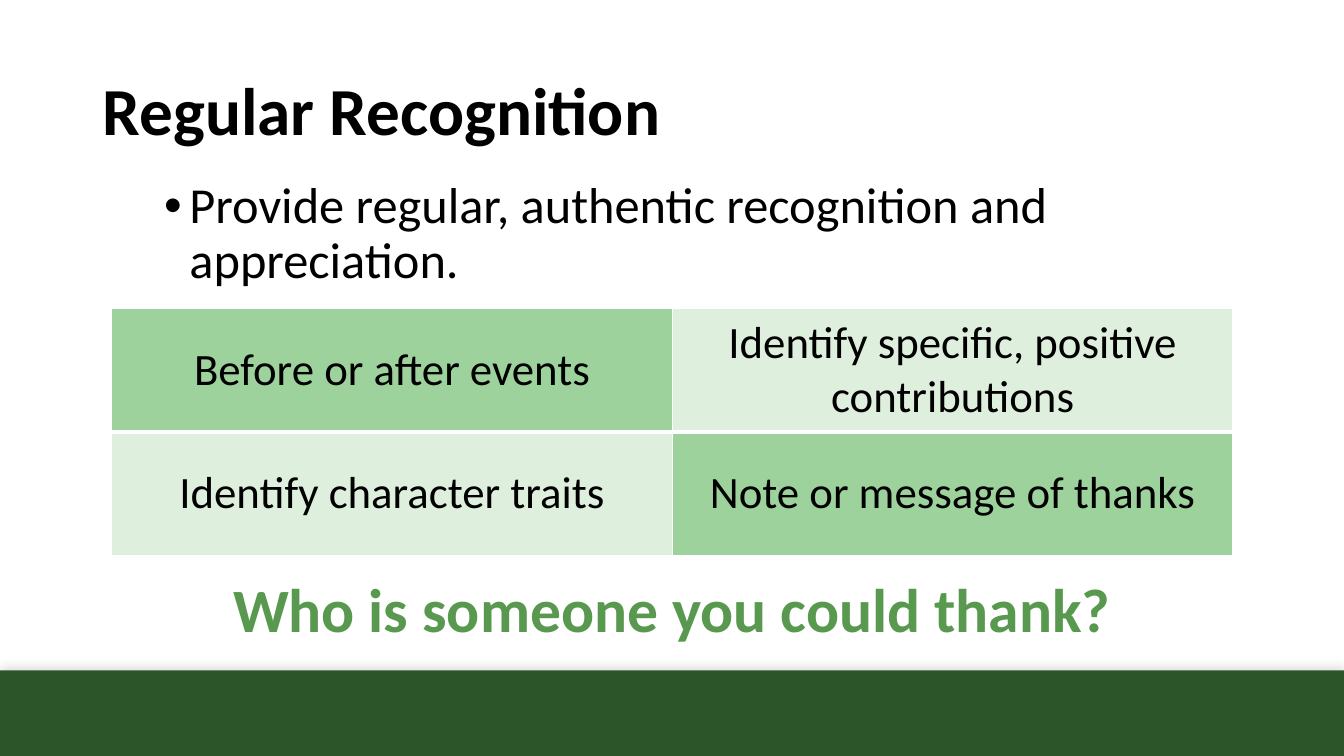
"""Build the Regular Recognition slide."""
import pptx
import pptx.dml.color
import pptx.enum.shapes
import pptx.enum.text
import pptx.oxml
import pptx.oxml.ns
import pptx.util
from pptx.util import Inches

COLORS = {
    "band": "2C5629",
    "strong": "9DD29C",
    "pale": "DFEFDD",
    "question": "59984F",
    "text": "000000",
    "border": "FFFFFF",
}
FONT = "Calibri"
ALIGN = pptx.enum.text.PP_ALIGN
ANCHOR = pptx.enum.text.MSO_ANCHOR
IDEAS = [
    ["Before or after events", "Identify specific, positive contributions"],
    ["Identify character traits", "Note or message of thanks"],
]


def rgb(name):
    """Return the named colour."""
    return pptx.dml.color.RGBColor.from_string(COLORS[name])


def drawing_element(markup):
    """Parse one DrawingML element, adding its namespace."""
    tag, rest = markup[1:].split(" ", 1)
    namespace = pptx.oxml.ns.nsdecls("a")
    return pptx.oxml.parse_xml(f"<{tag} {namespace} {rest}")


def add_span(para, text, size, color="text", bold=False):
    """Add one formatted run to a paragraph."""
    span = para.add_run()
    span.text = text
    span.font.name = FONT
    span.font.size = pptx.util.Pt(size)
    span.font.bold = bold
    span.font.color.rgb = rgb(color)


def add_text(page, area, text, size, color="text", bold=False,
             align=ALIGN.LEFT, anchor=ANCHOR.MIDDLE):
    """Add a wrapping text box and return its paragraph."""
    box = page.shapes.add_textbox(*map(Inches, area))
    box.text_frame.word_wrap = True
    box.text_frame.vertical_anchor = anchor
    para = box.text_frame.paragraphs[0]
    para.alignment = align
    para.line_spacing = 0.9
    add_span(para, text, size, color, bold)
    return para


def add_bullet(para):
    """Give a paragraph a hanging bullet."""
    properties = para._p.get_or_add_pPr()
    properties.set("marL", str(Inches(0.25)))
    properties.set("indent", str(-Inches(0.25)))
    properties.append(drawing_element('<a:buFont typeface="Arial"/>'))
    properties.append(drawing_element('<a:buChar char="•"/>'))


def add_band(page):
    """Add the footer band with a soft shadow above it."""
    rectangle = pptx.enum.shapes.MSO_SHAPE.RECTANGLE
    area = map(Inches, (0, 6.65, 13.33, 0.85))
    band = page.shapes.add_shape(rectangle, *area)
    band.fill.solid()
    band.fill.fore_color.rgb = rgb("band")
    band.line.fill.background()
    band.shadow.inherit = False
    effects = band._element.spPr.find(pptx.oxml.ns.qn("a:effectLst"))
    effects.append(drawing_element(
        f'<a:outerShdw blurRad="{pptx.util.Pt(7)}" dist="{pptx.util.Pt(3)}" '
        f'dir="16200000" rotWithShape="0"><a:srgbClr val="{COLORS["text"]}">'
        '<a:alpha val="13000"/></a:srgbClr></a:outerShdw>'))


def set_borders(cell, widths):
    """Draw the cell edges, given widths in points by edge letter."""
    properties = cell._tc.get_or_add_tcPr()
    for position, (edge, width) in enumerate(widths.items()):
        properties.insert(position, drawing_element(
            f'<a:ln{edge} w="{pptx.util.Pt(width)}"><a:solidFill>'
            f'<a:srgbClr val="{COLORS["border"]}"/></a:solidFill></a:ln{edge}>'))


def add_ideas_table(page):
    """Add the checkered table of recognition ideas."""
    area = map(Inches, (1.11, 3.06, 11.12, 2.45))
    table = page.shapes.add_table(2, 2, *area).table
    for row, texts in enumerate(IDEAS):
        for column, text in enumerate(texts):
            cell = table.cell(row, column)
            cell.vertical_anchor = ANCHOR.MIDDLE
            cell.fill.solid()
            cell.fill.fore_color.rgb = rgb("pale" if (row + column) % 2 else "strong")
            top, bottom = (3, 1) if row else (1, 3)
            set_borders(cell, {"L": 1, "R": 1, "T": top, "B": bottom})
            para = cell.text_frame.paragraphs[0]
            para.alignment = ALIGN.CENTER
            add_span(para, text, 32)


def main():
    """Build and save the deck."""
    deck = pptx.Presentation()
    deck.slide_width, deck.slide_height = Inches(13.33), Inches(7.5)
    page = deck.slides.add_slide(deck.slide_layouts[6])
    add_band(page)
    add_text(page, (0.92, 0.4, 11.5, 1.45), "Regular Recognition", 48, bold=True)
    advice = add_text(page, (1.53, 1.74, 11.38, 4.76),
                      "Provide regular, authentic recognition and appreciation.",
                      36, anchor=ANCHOR.TOP)
    add_bullet(advice)
    add_ideas_table(page)
    add_text(page, (0.92, 5.35, 11.5, 1.45), "Who is someone you could thank?",
             44, "question", bold=True, align=ALIGN.CENTER)
    deck.save("out.pptx")


if __name__ == "__main__":
    main()
